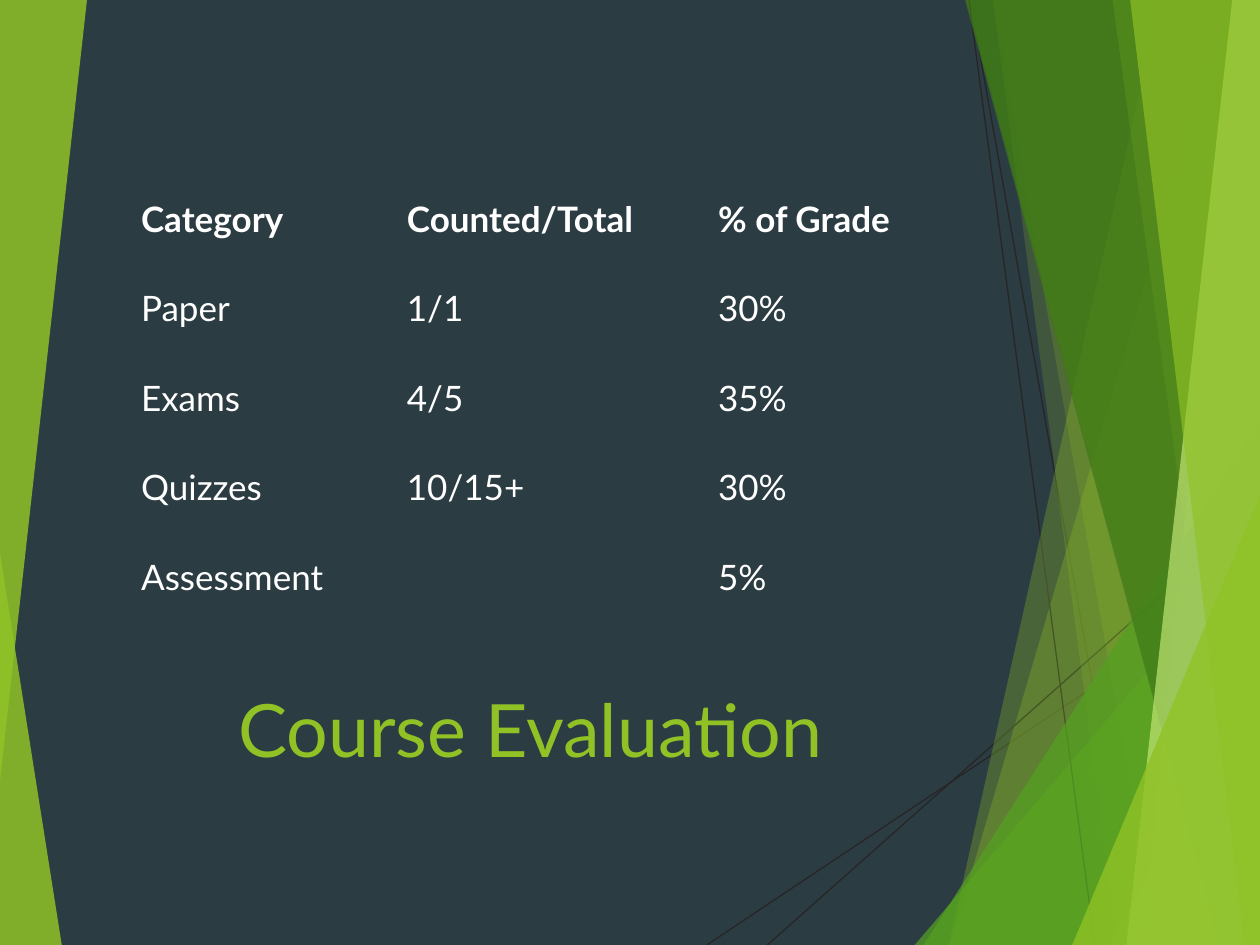
import pptx
import pptx.dml.color
import pptx.enum.shapes
import pptx.enum.text
import pptx.oxml
import pptx.oxml.ns
import pptx.util

WIDE, HIGH = 10, 7.5  # inches
FONT = "Lato"
HUES = {
    "back": "2C3C43", "lime": "90C226", "green": "54A021", "dark": "3F7819",
    "pale": "C0E474", "line": "262626", "white": "FFFFFF",
}
PLAIN = "{2D5ABB26-0587-4C30-8999-92F81FD0307C}"  # table style: no style, no grid


def cm(inch):
    return pptx.util.Cm(inch * 2.54)


def hue(name):
    return pptx.dml.color.RGBColor.from_string(HUES[name])


def put(frame, text, size=20, color="white", bold=False, align=None):
    par = frame.paragraphs[0]
    par.alignment = align
    run = par.add_run()
    run.text = text
    run.font.name = FONT
    run.font.size = pptx.util.Pt(size)
    run.font.bold = bold
    run.font.color.rgb = hue(color)


class Deck:
    def __init__(self):
        self.show = pptx.Presentation()
        self.show.slide_width = cm(WIDE)
        self.show.slide_height = cm(HIGH)
        self.slide = self.show.slides.add_slide(self.show.slide_layouts[6])
        self.shapes = self.slide.shapes
        fill = self.slide.background.fill
        fill.solid()
        fill.fore_color.rgb = hue("back")

    def paint(self, shape, color, alpha):
        shape.shadow.inherit = False
        shape.line.fill.background()
        shape.fill.solid()
        shape.fill.fore_color.rgb = hue(color)
        tone = shape.element.spPr.find(pptx.oxml.ns.qn("a:solidFill"))[0]
        node = pptx.oxml.parse_xml(
            f'<a:alpha {pptx.oxml.ns.nsdecls("a")} val="{alpha * 1000}"/>')
        tone.append(node)

    def line(self, x1, y1, x2, y2):
        kind = pptx.enum.shapes.MSO_CONNECTOR.STRAIGHT
        link = self.shapes.add_connector(kind, cm(x1), cm(y1), cm(x2), cm(y2))
        link.line.width = pptx.util.Pt(0.75)
        link.line.color.rgb = hue("line")
        link.element.spPr.append(pptx.oxml.parse_xml(
            f'<a:effectLst {pptx.oxml.ns.nsdecls("a")}/>'))

    def free(self, points, color, alpha):
        first, *rest = [(cm(x), cm(y)) for x, y in points]
        form = self.shapes.build_freeform(*first)
        form.add_line_segments(rest, close=True)
        self.paint(form.convert_to_shape(), color, alpha)

    def shard(self, top, foot, color, alpha):
        """Full-height band from a slanted left side to the right edge."""
        self.free([(top, 0), (WIDE, 0), (WIDE, HIGH), (foot, HIGH)], color, alpha)

    def wedge(self, x, y, color, alpha):
        """Triangle in the bottom right corner."""
        self.free([(x, HIGH), (WIDE, y), (WIDE, HIGH)], color, alpha)

    def peak(self, x, y, wide, high, color, alpha, turn=0):
        """Preset triangle with its tip over the right end."""
        kind = pptx.enum.shapes.MSO_SHAPE.ISOSCELES_TRIANGLE
        shape = self.shapes.add_shape(kind, cm(x), cm(y), cm(wide), cm(high))
        shape.adjustments[0] = 1
        shape.rotation = turn
        self.paint(shape, color, alpha)

    def title(self, text, x, y, wide, high):
        box = self.shapes.add_textbox(cm(x), cm(y), cm(wide), cm(high))
        frame = box.text_frame
        frame.word_wrap = True
        frame.vertical_anchor = pptx.enum.text.MSO_ANCHOR.BOTTOM
        put(frame, text, size=42, color="lime",
            align=pptx.enum.text.PP_ALIGN.CENTER)

    def table(self, rows, x, y, widths, high):
        frame = self.shapes.add_table(
            len(rows), len(widths), cm(x), cm(y),
            cm(sum(widths)), cm(high * len(rows)))
        grid = frame.table
        grid.horz_banding = False
        style = pptx.oxml.ns.qn("a:tableStyleId")
        next(frame.element.iter(style)).text = PLAIN
        for col, wide in zip(grid.columns, widths):
            col.width = cm(wide)
        for r, row in enumerate(rows):
            grid.rows[r].height = cm(high)
            for c, text in enumerate(row):
                cell = grid.cell(r, c)
                cell.fill.background()
                cell.margin_left, cell.margin_right = cm(0.31), cm(0.23)
                cell.margin_top = cell.margin_bottom = cm(0.16)
                if text:
                    put(cell.text_frame, text, bold=r == 0)


def main():
    deck = Deck()

    # Rear layer of facets
    deck.line(5.61, 7.5, 10, 4.57)
    deck.line(7.7, 0, 9.04, 7.5)
    deck.free([(0, 4.39), (0.49, HIGH), (0, HIGH)], "lime", 85)
    deck.shard(9.75, 7.54, "lime", 30)
    deck.shard(7.88, 9.19, "lime", 20)
    deck.wedge(7.26, 4.29, "green", 72)
    deck.shard(7.67, 9.7, "dark", 70)
    deck.shard(9.81, 9.07, "pale", 70)
    deck.shard(8.83, 9.86, "lime", 65)
    deck.wedge(8.81, 5.35, "lime", 80)

    # Front layer of facets
    deck.line(7.69, 0, 8.69, 7.5)
    deck.line(10, 4.03, 6.09, 7.5)
    deck.shard(9.21, 7.53, "lime", 30)
    deck.shard(7.88, 8.87, "lime", 20)
    deck.peak(7.33, 3.33, 2.67, 4.17, "green", 72)
    deck.shard(7.66, 9.68, "dark", 70)
    deck.shard(9.78, 8.94, "pale", 70)
    deck.shard(8.97, 9.88, "lime", 65)
    deck.peak(8.51, 3.93, 1.49, 3.57, "lime", 80)
    deck.peak(0, 0, 0.69, 6.2, "lime", 85, turn=180)

    # Title and grades
    deck.title("Course Evaluation", 0.81, 4.98, 6.8, 1.2)
    deck.table([
        ("Category", "Counted/Total", "% of Grade"),
        ("Paper", "1/1", "30%"),
        ("Exams", "4/5", "35%"),
        ("Quizzes", "10/15+", "30%"),
        ("Assessment", "", "5%"),
    ], 0.81, 1.41, (2.11, 2.47, 2.22), 0.71)

    deck.show.save("out.pptx")


if __name__ == "__main__":
    main()
